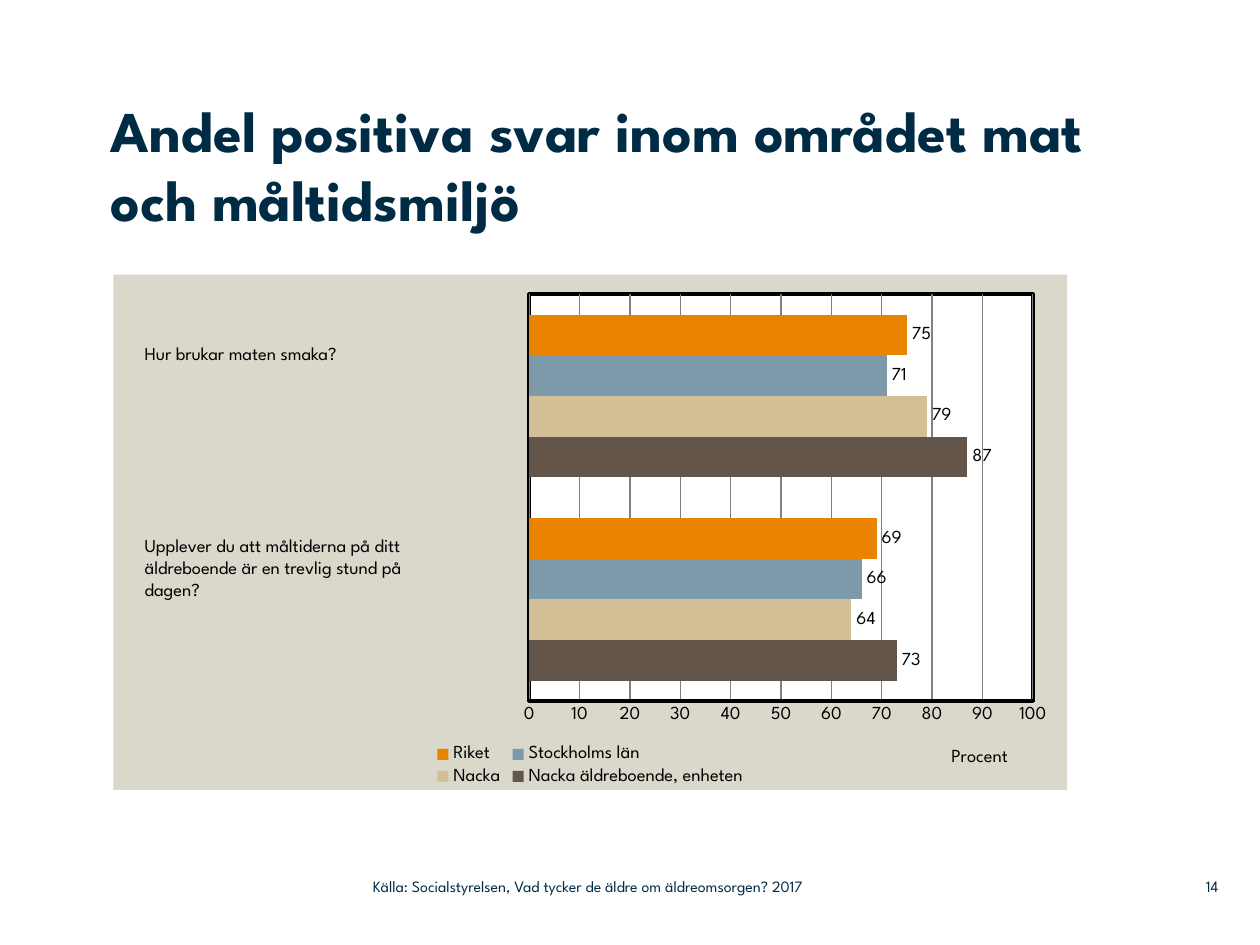
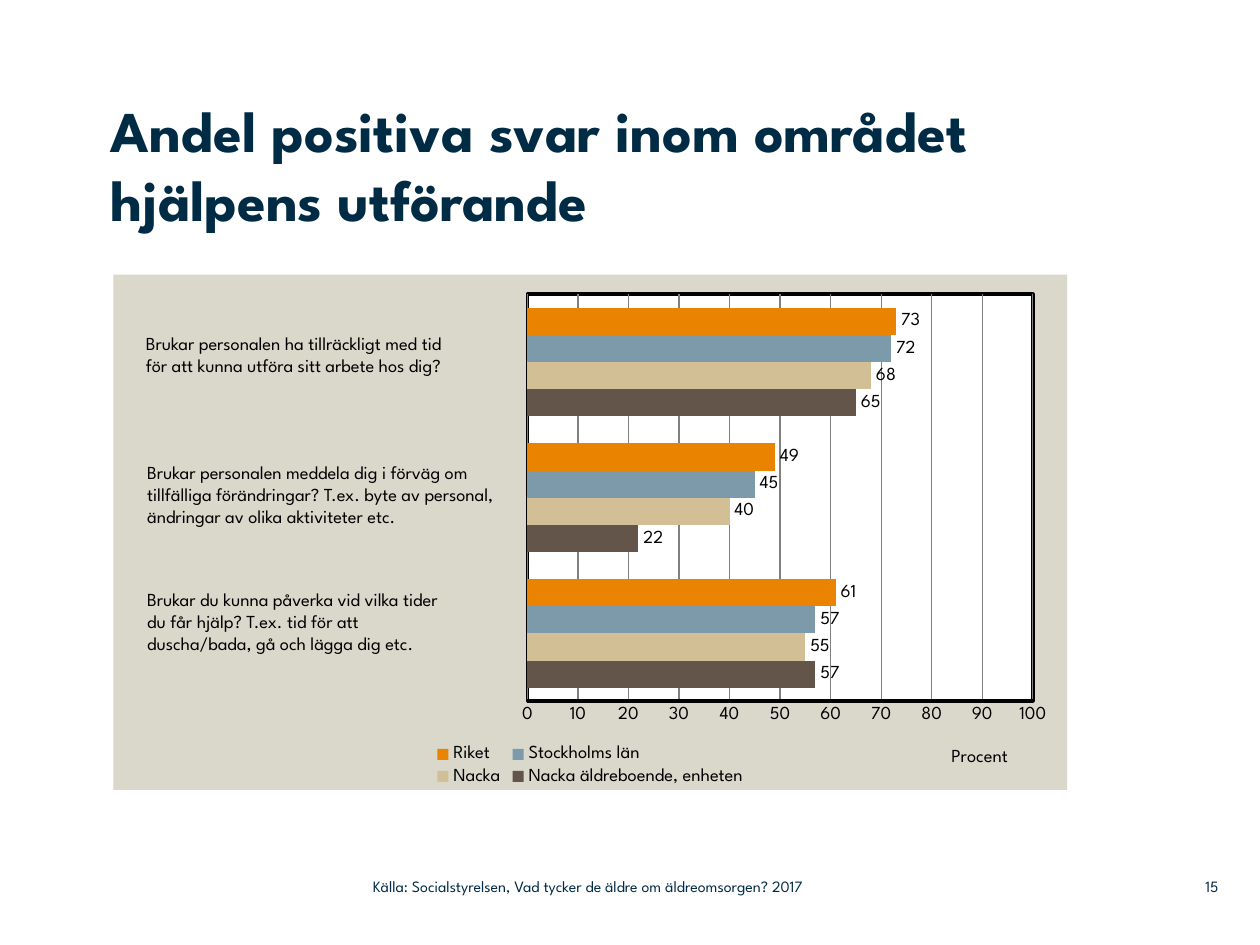
"""Build two slides of survey bar charts on care for the elderly."""
from pptx import Presentation
from pptx.chart.data import CategoryChartData as ChartData
from pptx.dml.color import RGBColor
from pptx.enum.chart import XL_CHART_TYPE as Kind, XL_LABEL_POSITION as Spot
from pptx.enum.chart import XL_LEGEND_POSITION as Side, XL_TICK_MARK as Tick
from pptx.enum.text import MSO_ANCHOR as Anchor, PP_ALIGN as Align
from pptx.oxml import parse_xml
from pptx.util import Inches, Pt

FACE = "League Spartan"
NAVY, BLACK, WHITE, SAND, GREY = "002B45", "000000", "FFFFFF", "DAD7CB", "808080"
SOURCE = "Källa: Socialstyrelsen, Vad tycker de äldre om äldreomsorgen? 2017"
GROUPS = [
    ("Nacka äldreboende, enheten", "635549"),
    ("Nacka", "D3BF96"),
    ("Stockholms län", "7D9AAA"),
    ("Riket", "E98300"),
]
NS = ('xmlns:c="http://schemas.openxmlformats.org/drawingml/2006/chart" '
      'xmlns:a="http://schemas.openxmlformats.org/drawingml/2006/main"')
FILL = '<c:spPr {}><a:solidFill><a:srgbClr val="{}"/></a:solidFill>{}</c:spPr>'
NO_LINE = "<a:ln><a:noFill/></a:ln>"
FRAME = ('<a:ln w="25400"><a:solidFill><a:srgbClr val="000000"/></a:solidFill>'
         "</a:ln>")
PLACE = ('<c:layout {}><c:manualLayout>{}<c:xMode val="edge"/>'
         '<c:yMode val="edge"/><c:x val="{}"/><c:y val="{}"/>{}'
         "</c:manualLayout></c:layout>")
INNER = '<c:layoutTarget val="inner"/>'
SPAN = '<c:w val="{}"/><c:h val="0.79"/>'

PAGES = [
    dict(num="14", title="Andel positiva svar inom området mat och måltidsmiljö",
         wide=8.42, left=0.436,
         rows=[[73, 87], [64, 79], [66, 71], [69, 75]],
         asks=[(1.05, 2.67, 0.28, "Hur brukar maten smaka?"),
               (1.05, 4.19, 0.63, "Upplever du att måltiderna på ditt "
                "äldreboende är en trevlig stund på\ndagen?")]),
    dict(num="15", title="Andel positiva svar inom området hjälpens utförande",
         wide=7.6, left=0.434,
         rows=[[57, 22, 65], [55, 40, 68], [57, 45, 72], [61, 49, 73]],
         asks=[(1.06, 2.59, 0.45, "Brukar personalen ha tillräckligt med tid\n"
                "för att kunna utföra sitt arbete hos dig?"),
               (1.07, 3.61, 0.81, "Brukar personalen meddela dig i förväg om "
                "tillfälliga förändringar? T.ex. byte av personal, "
                "ändringar av olika aktiviteter etc."),
               (1.07, 4.62, 0.63, "Brukar du kunna påverka vid vilka tider\n"
                "du får hjälp? T.ex. tid för att\n"
                "duscha/bada, gå och lägga dig etc.")]),
]


def tint(code):
    """Turn a hex string into a colour."""
    return RGBColor.from_string(code)


def write(slide, text, box, size=10.5, hue=BLACK, bold=False, align=Align.LEFT,
          anchor=Anchor.TOP, flush=True):
    """Put text in a box, one paragraph a line."""
    frame = slide.shapes.add_textbox(*map(Inches, box)).text_frame
    frame.word_wrap = True
    frame.vertical_anchor = anchor
    if flush:
        frame.margin_left = frame.margin_right = 0
        frame.margin_top = frame.margin_bottom = 0
    frame.text = text
    for para in frame.paragraphs:
        para.alignment = align
        font = para.font
        font.name, font.size, font.bold = FACE, Pt(size), bold
        font.color.rgb = tint(hue)


deck = Presentation()
deck.slide_width, deck.slide_height = Inches(10), Inches(7.5)

for page in PAGES:
    slide = deck.slides.add_slide(deck.slide_layouts[6])

    data = ChartData(number_format="0")
    data.categories = [str(n + 1) for n in range(len(page["asks"]))]
    for (name, _), row in zip(GROUPS, page["rows"]):
        data.add_series(name, row)
    area = [Inches(n) for n in (0.9, 2.18, 7.57, 4.09)]
    chart = slide.shapes.add_chart(Kind.BAR_CLUSTERED, *area, data).chart
    chart.has_title = False
    chart.font.name, chart.font.size = FACE, Pt(10.5)
    chart.font.color.rgb = tint(BLACK)
    chart.has_legend = True
    chart.legend.position = Side.BOTTOM
    chart.legend.include_in_layout = False

    plot = chart.plots[0]
    plot.gap_width, plot.overlap = 100, 0
    plot.vary_by_categories = False
    plot.has_data_labels = True
    plot.data_labels.show_value = True
    plot.data_labels.position = Spot.OUTSIDE_END
    for bars, (_, hue) in zip(plot.series, GROUPS):
        bars.format.fill.solid()
        bars.format.fill.fore_color.rgb = tint(hue)

    chart.category_axis.visible = False
    axis = chart.value_axis
    axis.minimum_scale, axis.maximum_scale, axis.major_unit = 0, 100, 10
    axis.major_tick_mark = axis.minor_tick_mark = Tick.NONE
    axis.format.line.color.rgb = tint(BLACK)
    axis.format.line.width = Pt(2)
    axis.has_major_gridlines = True
    grid = axis.major_gridlines.format.line
    grid.color.rgb, grid.width = tint(GREY), Pt(0.75)
    unit = axis.axis_title.text_frame
    unit.text = "Procent"
    font = unit.paragraphs[0].runs[0].font
    font.name, font.size, font.bold = FACE, Pt(10.5), False
    font.color.rgb = tint(BLACK)

    root = chart.element
    field = root.find(".//{*}plotArea")
    head = field.find(".//{*}valAx/{*}title")
    for part in (field, head):
        for old in part.findall("{*}layout"):
            part.remove(old)
    span = SPAN.format(round(0.964 - page["left"], 3))
    field.insert(0, parse_xml(PLACE.format(NS, INNER, page["left"], 0.038, span)))
    field.append(parse_xml(FILL.format(NS, WHITE, FRAME)))
    head.find("{*}tx").addnext(parse_xml(PLACE.format(NS, "", 0.875, 0.91, "")))
    root.find("{*}chart").addnext(parse_xml(FILL.format(NS, SAND, NO_LINE)))

    write(slide, page["title"], (0.88, 0.75, page["wide"], 1.42), size=33,
          hue=NAVY, bold=True)
    for left, top, high, ask in page["asks"]:
        write(slide, ask, (left, top, 2.97, high), flush=False)
    write(slide, page["num"], (9.2, 6.89, 0.47, 0.29), size=9, hue=NAVY,
          align=Align.RIGHT, anchor=Anchor.MIDDLE)
    write(slide, SOURCE, (2.96, 6.89, 4.43, 0.29), size=9, hue=NAVY,
          anchor=Anchor.MIDDLE)

deck.save("out.pptx")
